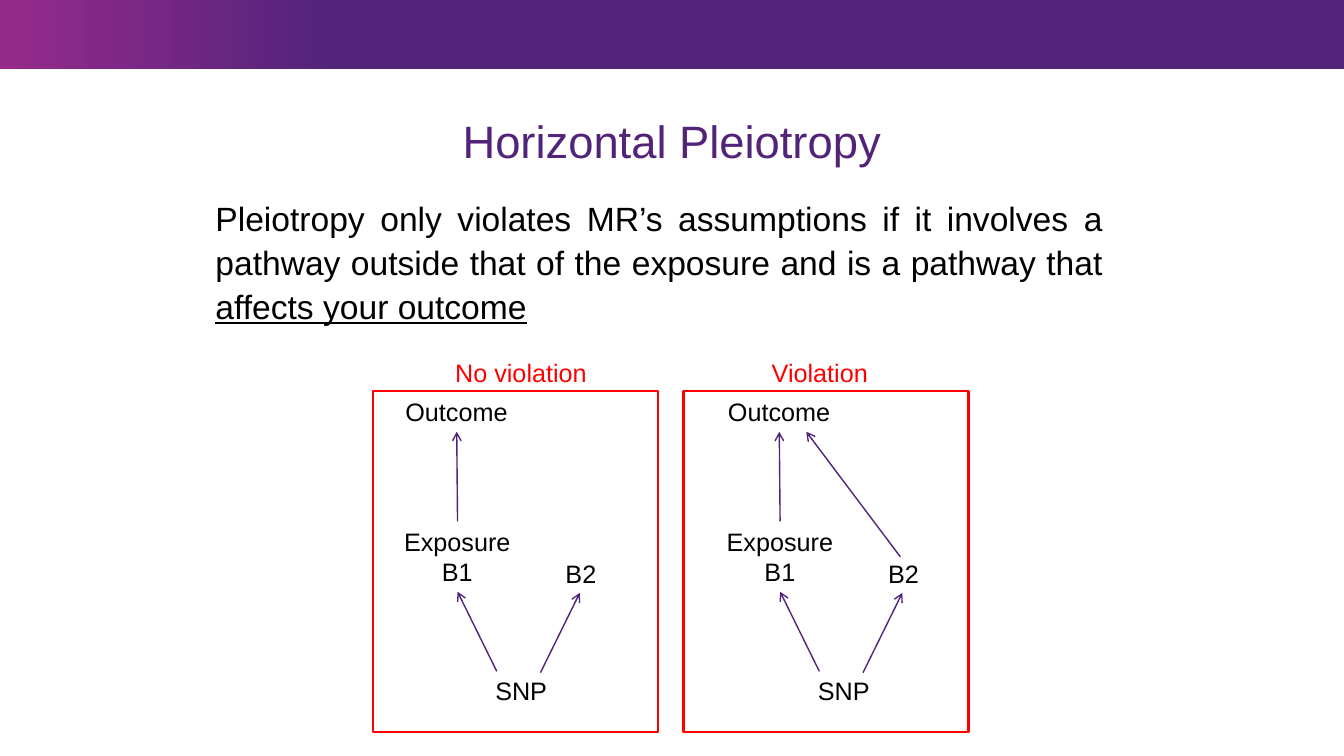
from dataclasses import dataclass

from lxml.etree import SubElement
from pptx import Presentation
from pptx.dml.color import RGBColor
from pptx.enum.shapes import MSO_CONNECTOR, MSO_SHAPE
from pptx.enum.text import MSO_ANCHOR, PP_ALIGN
from pptx.oxml.ns import qn
from pptx.util import Cm, Pt


@dataclass(frozen=True)
class Theme:
    """Colours, font and type sizes of the slide."""
    purple: RGBColor = RGBColor(0x51, 0x24, 0x7A)
    magenta: RGBColor = RGBColor(0x96, 0x2A, 0x8B)
    red: RGBColor = RGBColor(0xFF, 0x00, 0x00)
    black: RGBColor = RGBColor(0x00, 0x00, 0x00)
    font: str = "Arial"
    title_size: float = 32.4
    body_size: float = 24
    label_size: float = 18


THEME = Theme()
SLIDE_WIDTH, SLIDE_HEIGHT = 33.87, 19.05

NODES = (
    ("Outcome", (0.3, 0, 3.61, 1.02)),
    ("Exposure\nB1", (0.13, 3.28, 3.99, 1.8)),
    ("B2", (4.34, 4.09, 1.8, 1.02)),
    ("SNP", (2.82, 7.04, 1.83, 1.02)),
)
SHARED_PATHWAYS = (
    ((3.12, 7.06), (2.13, 5.05)),
    ((2.13, 3.28), (2.11, 1.02)),
    ((4.22, 7.09), (5.21, 5.08)),
)
OUTSIDE_PATHWAY = ((5.16, 4.17), (2.79, 1.02))


def add_text(slide, text, box, size=THEME.label_size, color=THEME.black,
             align=PP_ALIGN.CENTER, anchor=MSO_ANCHOR.TOP, inset=None,
             line_spacing=None, underlined=""):
    """Place text in a box, with an optional underlined ending."""
    frame = slide.shapes.add_textbox(*map(Cm, box)).text_frame
    frame.word_wrap = True
    frame.vertical_anchor = anchor
    if inset is not None:
        frame.margin_left = frame.margin_right = Cm(inset)
        frame.margin_top = frame.margin_bottom = Cm(inset)
    frame.text = text
    if underlined:
        ending = frame.paragraphs[-1].add_run()
        ending.text = underlined
        ending.font.underline = True
    for paragraph in frame.paragraphs:
        paragraph.alignment = align
        paragraph.line_spacing = line_spacing
        for run in paragraph.runs:
            run.font.name = THEME.font
            run.font.size = Pt(size)
            run.font.color.rgb = color


def add_arrow(slide, start, end):
    """Draw a thin arrow between two points."""
    arrow = slide.shapes.add_connector(MSO_CONNECTOR.STRAIGHT, *map(Cm, start + end))
    arrow.line.color.rgb = THEME.purple
    arrow.line.width = Pt(1)
    SubElement(arrow.line._get_or_add_ln(), qn("a:tailEnd"), type="arrow")
    SubElement(arrow._element.spPr, qn("a:effectLst"))


def add_banner(slide, box):
    """Draw the gradient band in its box."""
    banner = slide.shapes.add_shape(MSO_SHAPE.RECTANGLE, *map(Cm, box))
    banner.shadow.inherit = False
    banner.line.fill.background()
    banner.fill.gradient()
    banner.fill.gradient_angle = 0
    stops = ((0, THEME.magenta), (0.25, THEME.purple))
    for stop, (position, color) in zip(banner.fill.gradient_stops, stops):
        stop.position = position
        stop.color.rgb = color


def add_heading(slide, box):
    """Write the title and the statement below it."""
    left, top, width, height = box
    add_text(slide, "Horizontal Pleiotropy", (left, top, width, 1.3),
             size=THEME.title_size, color=THEME.purple,
             anchor=MSO_ANCHOR.MIDDLE, inset=0, line_spacing=0.9)
    add_text(slide, "Pleiotropy only violates MR’s assumptions if it involves a "
             "pathway outside that of the exposure and is a pathway that ",
             (left + 3.25, top + 1.78, 22.86, height - 1.78),
             size=THEME.body_size, align=PP_ALIGN.JUSTIFY, line_spacing=1.1,
             underlined="affects your outcome")


def add_panel(slide, box, caption, caption_center, pathways, indent=0):
    """Draw a captioned frame holding one causal diagram."""
    left, top, width, height = box
    panel = slide.shapes.add_shape(MSO_SHAPE.RECTANGLE, *map(Cm, box))
    panel.shadow.inherit = False
    panel.fill.background()
    panel.line.color.rgb = THEME.red
    panel.line.width = Pt(1.75)
    add_text(slide, caption, (left + caption_center - 2.5, top - 0.99, 5, 1.02),
             color=THEME.red)
    origin = left + indent
    for label, (x, y, label_width, label_height) in NODES:
        add_text(slide, label, (origin + x, top + y, label_width, label_height))
    for start, end in pathways:
        add_arrow(slide, *((origin + x, top + y) for x, y in (start, end)))


def main():
    """Build and save the slide."""
    deck = Presentation()
    deck.slide_width, deck.slide_height = Cm(SLIDE_WIDTH), Cm(SLIDE_HEIGHT)
    slide = deck.slides.add_slide(deck.slide_layouts[6])
    add_banner(slide, (0, 0, SLIDE_WIDTH, 1.75))
    add_heading(slide, (1.93, 2.97, 30, 6))
    add_panel(slide, (9.4, 9.86, 7.19, 8.59), "No violation", 3.73, SHARED_PATHWAYS)
    add_panel(slide, (17.22, 9.86, 7.19, 8.59), "Violation", 3.44,
              SHARED_PATHWAYS + (OUTSIDE_PATHWAY,), indent=0.31)
    deck.save("out.pptx")


if __name__ == "__main__":
    main()
